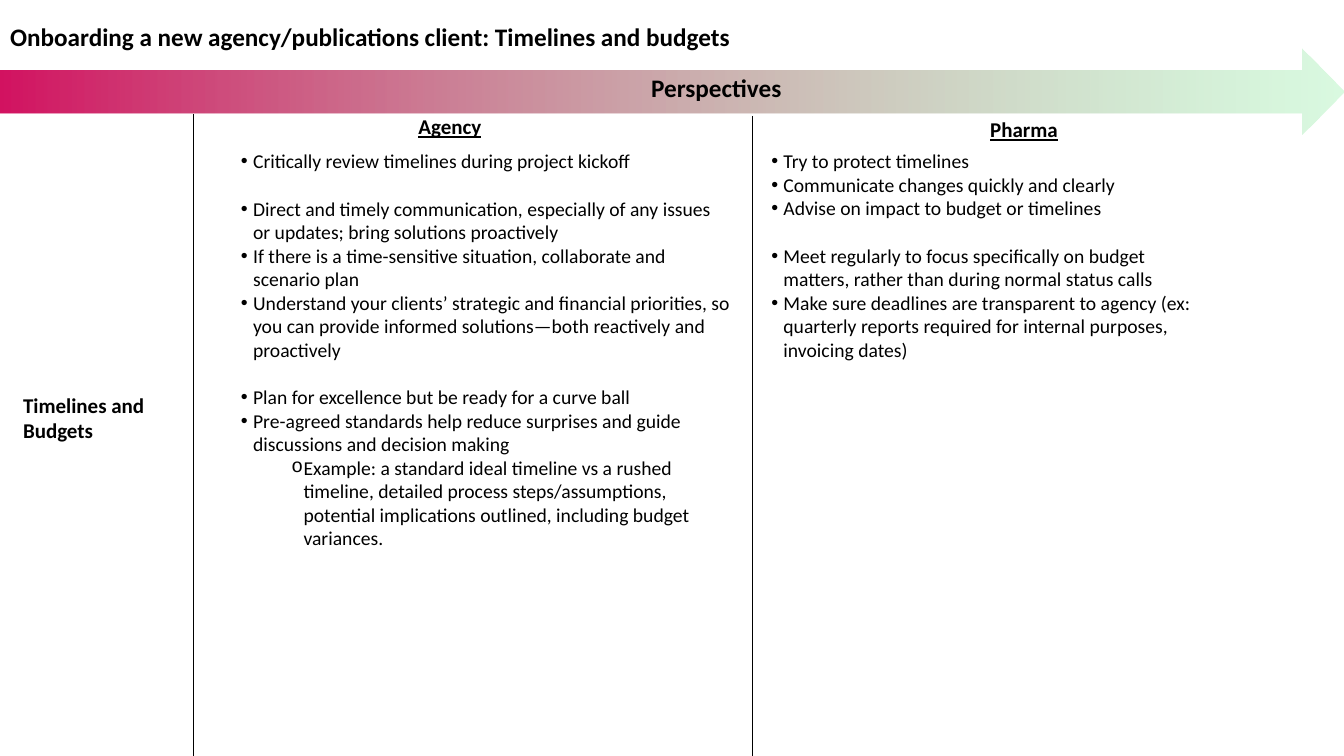
from dataclasses import dataclass

from lxml.etree import SubElement
from pptx import Presentation
from pptx.dml.color import RGBColor
from pptx.enum.shapes import MSO_CONNECTOR as CONN, MSO_SHAPE as SHAPE
from pptx.enum.text import MSO_ANCHOR as ANCHOR, MSO_AUTO_SIZE as FIT, PP_ALIGN as ALIGN
from pptx.oxml.ns import qn
from pptx.util import Inches, Pt


@dataclass(frozen=True)
class Theme:
    font: str = "Calibri"
    ink: RGBColor = RGBColor(0x00, 0x00, 0x00)
    start: RGBColor = RGBColor(0xD3, 0x13, 0x61)
    end: RGBColor = RGBColor(0x94, 0xF0, 0xA8)
    end_alpha: int = 35
    title: int = 18
    heading: int = 15
    body: int = 14
    gap: int = 17
    rule: float = 0.5


T = Theme()
BULLETS = (("•", "Arial", 0.12), ("o", "Courier New", 0.62))
HANGING = 0.12

AGENCY = [
    ("Critically review timelines during project kickoff", 0, False),
    ("Direct and timely communication, especially of any issues or updates; "
     "bring solutions proactively", 0, True),
    ("If there is a time-sensitive situation, collaborate and scenario plan", 0, False),
    ("Understand your clients’ strategic and financial priorities, so you can provide "
     "informed solutions—both reactively and proactively", 0, False),
    ("Plan for excellence but be ready for a curve ball", 0, True),
    ("Pre-agreed standards help reduce surprises and guide discussions and "
     "decision making", 0, False),
    ("Example: a standard ideal timeline vs a rushed timeline, detailed process "
     "steps/assumptions, potential implications outlined, including budget variances.",
     1, False),
]
PHARMA = [
    ("Try to protect timelines", 0, False),
    ("Communicate changes quickly and clearly", 0, False),
    ("Advise on impact to budget or timelines", 0, False),
    ("Meet regularly to focus specifically on budget matters, rather than during "
     "normal status calls", 0, True),
    ("Make sure deadlines are transparent to agency (ex: quarterly reports required for "
     "internal purposes, invoicing dates)", 0, False),
]


def apply(obj, values):
    for name, value in values.items():
        setattr(obj, name, value)


def place(sp, box):
    apply(sp, dict(zip(("left", "top", "width", "height"), map(Inches, box))))
    tf = sp.text_frame
    apply(tf, {"word_wrap": True, "auto_size": FIT.NONE, "vertical_anchor": ANCHOR.TOP})
    return tf


def write(p, text, size, bold=False, underline=False, gap=0):
    apply(p, {"alignment": ALIGN.LEFT, "space_before": Pt(gap), "space_after": Pt(0)})
    r = p.add_run()
    r.text = text
    apply(r.font, {"name": T.font, "size": Pt(size), "bold": bold, "underline": underline})
    r.font.color.rgb = T.ink


def add_label(sp, box, text, size, underline=False):
    write(place(sp, box).paragraphs[0], text, size, bold=True, underline=underline)


def set_bullet(p, level):
    char, font, margin = BULLETS[level]
    p.level = level
    pPr = p._p.get_or_add_pPr()
    pPr.set("marL", str(Inches(margin)))
    pPr.set("indent", str(-Inches(HANGING)))
    SubElement(pPr, qn("a:buFont"), typeface=font)
    SubElement(pPr, qn("a:buChar"), char=char)


def fill_list(sp, box, items):
    tf = place(sp, box)
    for i, (text, level, new_group) in enumerate(items):
        p = tf.add_paragraph() if i else tf.paragraphs[0]
        write(p, text, T.body, gap=T.gap if new_group else 0)
        set_bullet(p, level)


def add_arrow(s, box):
    sp = s.shapes.add_shape(SHAPE.RIGHT_ARROW, *map(Inches, box))
    sp.shadow.inherit = False
    sp.line.fill.background()
    sp.fill.gradient()
    sp.fill.gradient_angle = 0
    for stop, color, position in zip(sp.fill.gradient_stops, (T.start, T.end), (0, 1)):
        stop.color.rgb = color
        stop.position = position
    end = sp._element.findall(".//" + qn("a:srgbClr"))[-1]
    SubElement(end, qn("a:alpha"), val=str(T.end_alpha * 1000))
    s.shapes._spTree.insert(2, sp._element)


def add_divider(s, x, top, bottom):
    line = s.shapes.add_connector(CONN.STRAIGHT, *map(Inches, (x, top, x, bottom)))
    line.line.color.rgb = T.ink
    line.line.width = Pt(T.rule)
    SubElement(line._element.spPr, qn("a:effectLst"))


def main():
    prs = Presentation()
    prs.slide_width, prs.slide_height = Inches(13.33), Inches(7.5)
    s = prs.slides.add_slide(prs.slide_layouts.get_by_name("Comparison"))
    title, agency_head, agency_list, pharma_head, pharma_list = s.placeholders

    add_arrow(s, (0, 0.48, 13.33, 0.85))
    add_label(title, (0, 0.16, 11.14, 0.4),
              "Onboarding a new agency/publications client: Timelines and budgets", T.title)
    for box, text, size in (
        ((6.36, 0.67, 4.17, 0.4), "Perspectives", T.title),
        ((0.13, 3.84, 1.69, 0.61), "Timelines and Budgets", T.heading),
    ):
        add_label(s.shapes.add_textbox(0, 0, 0, 0), box, text, size)

    add_label(agency_head, (4.05, 1.08, 1.46, 0.35), "Agency", T.heading, underline=True)
    add_label(pharma_head, (9.72, 1.11, 1.63, 0.35), "Pharma", T.heading, underline=True)
    fill_list(agency_list, (2.29, 1.43, 5.06, 4.11), AGENCY)
    fill_list(pharma_list, (7.55, 1.43, 4.48, 2.22), PHARMA)
    add_divider(s, 1.92, 1.13, 7.5)
    add_divider(s, 7.46, 1.15, 7.5)
    prs.save("out.pptx")


if __name__ == "__main__":
    main()
